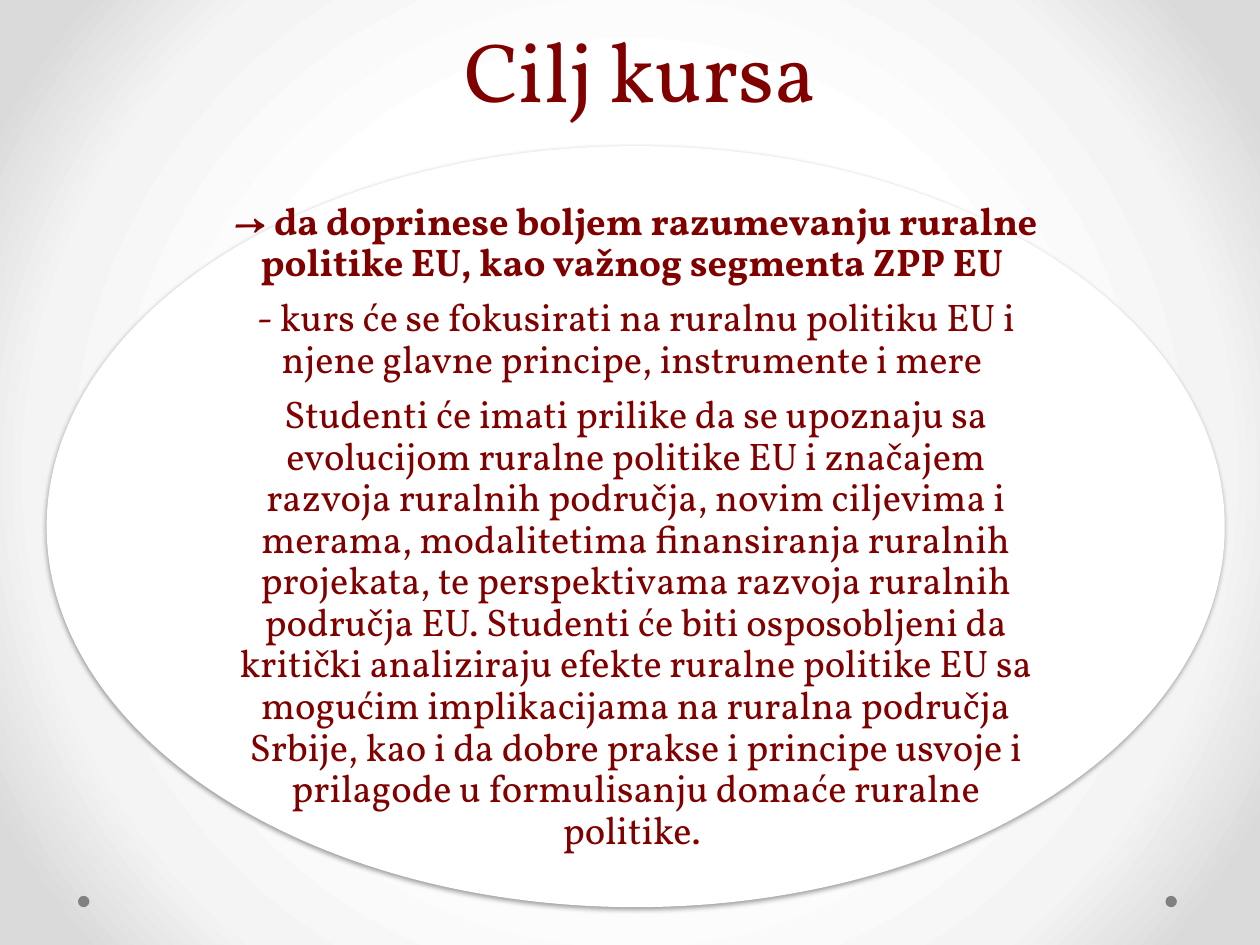
from lxml import etree
from pptx import Presentation
from pptx.dml.color import RGBColor
from pptx.enum.shapes import MSO_SHAPE
from pptx.enum.text import MSO_ANCHOR, PP_ALIGN
from pptx.oxml import parse_xml
from pptx.oxml.ns import nsdecls, qn
from pptx.util import Pt

OVAL = MSO_SHAPE.OVAL
CENTER = PP_ALIGN.CENTER
TITLE_ONLY = 5

FONT = "Vollkorn"
MAROON, WHITE, GREY = "800000", "FFFFFF", "808080"
BACKGROUND_STOPS = [(50, "FFFFFF"), (76, "F4F4F4"), (92, "DADADA")]

TITLE = "Cilj kursa"
GOALS = [  # text, bold
    ("→ da doprinese boljem razumevanju ruralne politike EU, "
     "kao važnog segmenta ZPP EU ", True),
    ("- kurs će se fokusirati na ruralnu politiku EU i njene glavne principe, "
     "instrumente i mere ", False),
    ("Studenti će imati prilike da se upoznaju sa evolucijom ruralne politike EU "
     "i značajem razvoja ruralnih područja, novim ciljevima i merama, "
     "modalitetima finansiranja ruralnih projekata, te perspektivama razvoja "
     "ruralnih područja EU. Studenti će biti osposobljeni da kritički analiziraju "
     "efekte ruralne politike EU sa mogućim implikacijama na ruralna područja "
     "Srbije, kao i da dobre prakse i principe usvoje i prilagode u formulisanju "
     "domaće ruralne politike. ", False),
]

# left, top, width, height in points
TITLE_BOX = (133.2, 15.1, 465.1, 56.9)
GOAL_OVAL = (26.64, 83.5, 673.2, 434.9)
GOAL_BOX = (125.3, 147.6, 475.9, 307.4)
DOT_LEFTS, DOT_TOP, DOT_SIZE = (44.6, 666), 511.9, 6.5


def points(box):
    return [Pt(value) for value in box]


def color(hex_code):
    return RGBColor.from_string(hex_code)


def add_oval(slide, box, fill):
    oval = slide.shapes.add_shape(OVAL, *points(box))
    oval.fill.solid()
    oval.fill.fore_color.rgb = color(fill)
    oval.line.fill.background()
    oval.shadow.inherit = False
    return oval


def add_soft_shadow(shape):
    effects = shape.element.spPr.find(qn("a:effectLst"))
    shadow = etree.SubElement(effects, qn("a:outerShdw"), blurRad=str(Pt(3.1)),
                              dist=str(Pt(1.6)), dir="5400000", rotWithShape="0")
    black = etree.SubElement(shadow, qn("a:srgbClr"), val="000000")
    etree.SubElement(black, qn("a:alpha"), val="38000")


def set_radial_background(slide):
    slide.background.fill.solid()
    solid = next(slide.element.iter(qn("a:solidFill")))
    stops = "".join(f'<a:gs pos="{pos * 1000}"><a:srgbClr val="{code}"/></a:gs>'
                    for pos, code in BACKGROUND_STOPS)
    solid.getparent().replace(solid, parse_xml(
        f'<a:gradFill {nsdecls("a")} rotWithShape="1"><a:gsLst>{stops}</a:gsLst>'
        '<a:path path="circle"><a:fillToRect l="50000" t="50000" r="50000" '
        'b="50000"/></a:path></a:gradFill>'))


def format_paragraph(paragraph, size, spacing, bold=False):
    paragraph.alignment = CENTER
    paragraph.line_spacing = spacing
    font = paragraph.font
    font.name, font.size, font.bold = FONT, Pt(size), bold
    font.color.rgb = color(MAROON)


def set_frame(frame, anchor, margin):
    frame.word_wrap = True
    frame.vertical_anchor = anchor
    frame.margin_left = frame.margin_right = Pt(margin)
    frame.margin_top = frame.margin_bottom = Pt(margin)


def main():
    prs = Presentation()
    prs.slide_width, prs.slide_height = Pt(720), Pt(540)
    slide = prs.slides.add_slide(prs.slide_layouts[TITLE_ONLY])
    set_radial_background(slide)

    for left in DOT_LEFTS:
        add_oval(slide, (left, DOT_TOP, DOT_SIZE, DOT_SIZE), GREY)

    title = slide.shapes.title
    title.left, title.top, title.width, title.height = points(TITLE_BOX)
    title.text_frame.text = TITLE
    set_frame(title.text_frame, MSO_ANCHOR.BOTTOM, 3.6)
    format_paragraph(title.text_frame.paragraphs[0], 48, Pt(58))

    add_soft_shadow(add_oval(slide, GOAL_OVAL, WHITE))

    goals = slide.shapes.add_textbox(*points(GOAL_BOX)).text_frame
    set_frame(goals, MSO_ANCHOR.MIDDLE, 2.2)
    goals.text = "\n".join(text for text, _ in GOALS)
    for paragraph, (_, bold) in zip(goals.paragraphs, GOALS):
        format_paragraph(paragraph, 22, 0.9, bold)
        paragraph.space_after = Pt(7.7)

    prs.save("out.pptx")


if __name__ == "__main__":
    main()
